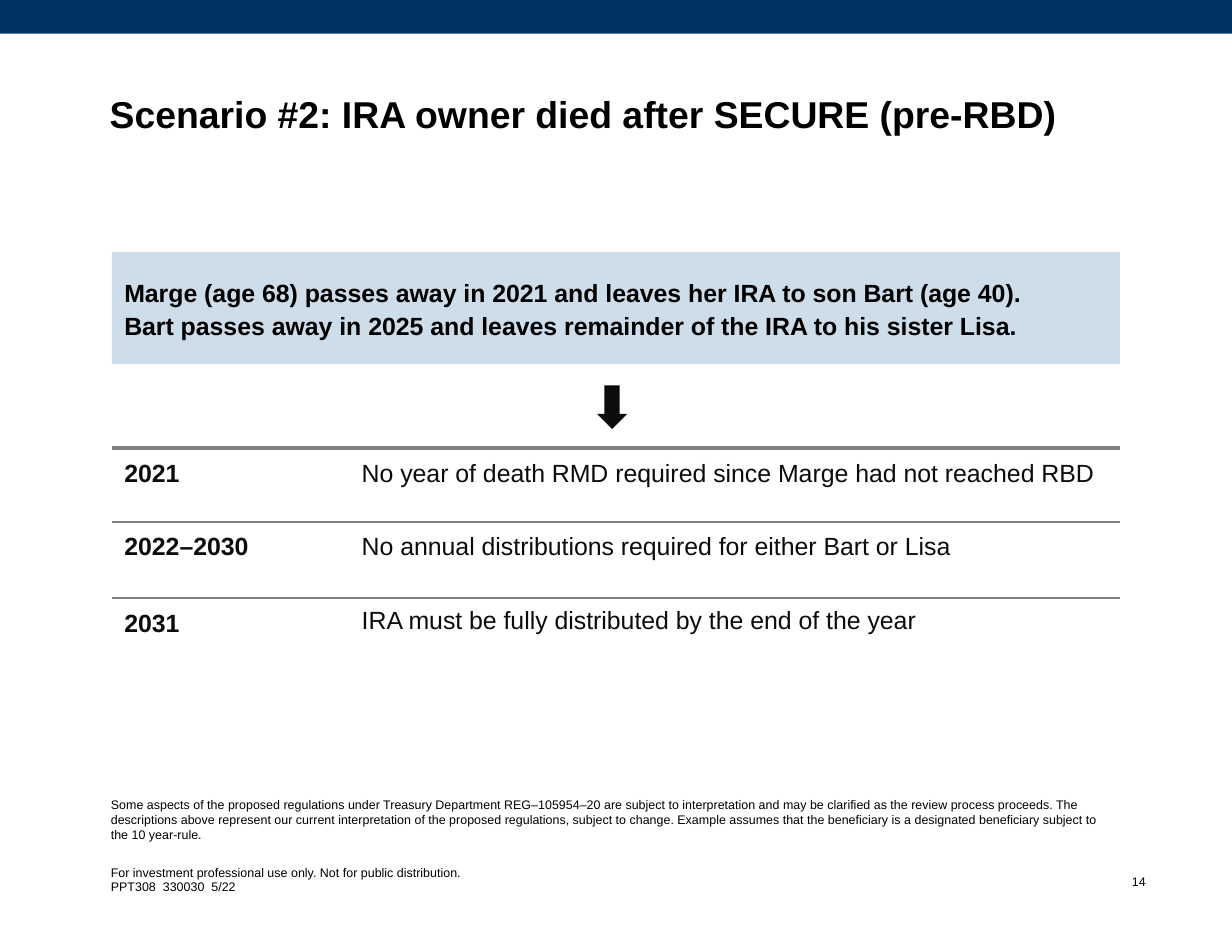
"""Build the inherited IRA scenario slide with its yearly distribution table."""
import lxml.etree
import pptx
import pptx.dml.color
import pptx.enum.shapes
import pptx.enum.text
import pptx.oxml
import pptx.oxml.ns
import pptx.util

Inches = pptx.util.Inches
Pt = pptx.util.Pt
SHAPES = pptx.enum.shapes.MSO_SHAPE
ANCHOR = pptx.enum.text.MSO_ANCHOR
ALIGN = pptx.enum.text.PP_ALIGN
COLORS = {
    "navy": "003365",
    "pale": "CDDDE9",
    "black": "000000",
    "ink": "0C0C0C",
    "rule": "808080",
}


def write(frame, lines, size, color="black", bold=False, paragraph_format=None, frame_format=None):
    """Fill a text frame with one paragraph per line."""
    settings = {"word_wrap": True, "margin_left": Inches(0.11), "margin_right": Inches(0.11),
                "margin_top": Inches(0.06), "margin_bottom": Inches(0.06)}
    settings.update(frame_format or {})
    for name, value in settings.items():
        setattr(frame, name, value)
    frame.text = "\n".join(lines)
    for para in frame.paragraphs:
        for name, value in (paragraph_format or {}).items():
            setattr(para, name, value)
        for span in para.runs:
            for name, value in {"name": "Arial", "size": Pt(size), "bold": bold}.items():
                setattr(span.font, name, value)
            span.font.color.rgb = pptx.dml.color.RGBColor.from_string(COLORS[color])


def set_border(cell, side, width):
    """Draw one cell border, or clear it when the width is zero."""
    line = lxml.etree.SubElement(cell._tc.get_or_add_tcPr(), pptx.oxml.ns.qn(f"a:ln{side}"))
    line.set("w", str(Pt(width)))
    if width:
        fill = lxml.etree.SubElement(line, pptx.oxml.ns.qn("a:solidFill"))
        lxml.etree.SubElement(fill, pptx.oxml.ns.qn("a:srgbClr")).set("val", COLORS["rule"])
    else:
        lxml.etree.SubElement(line, pptx.oxml.ns.qn("a:noFill"))


deck = pptx.Presentation()
deck.slide_width = Inches(11)
deck.slide_height = Inches(8.5)
slide = deck.slides.add_slide(deck.slide_layouts[6])

blocks = {}
for name, kind, color, area in [
    ("banner", SHAPES.RECTANGLE, "navy", (0, 0, 11, 0.3)),
    ("statement", SHAPES.RECTANGLE, "pale", (1, 2.25, 9, 1)),
    ("arrow", SHAPES.DOWN_ARROW, "ink", (5.33, 3.44, 0.27, 0.39)),
]:
    block = slide.shapes.add_shape(kind, *map(Inches, area))
    block.shadow.inherit = False
    block.fill.solid()
    block.fill.fore_color.rgb = pptx.dml.color.RGBColor.from_string(COLORS[color])
    block.line.fill.background()
    blocks[name] = block

write(
    blocks["statement"].text_frame,
    ["Marge (age 68) passes away in 2021 and leaves her IRA to son Bart (age 40). \v"
     "Bart passes away in 2025 and leaves remainder of the IRA to his sister Lisa."],
    16, bold=True,
    paragraph_format={"line_spacing": 1.1, "alignment": ALIGN.LEFT},
    frame_format={"vertical_anchor": ANCHOR.MIDDLE},
)

for area, lines, size, bold, paragraph_format, frame_format in [
    ((0.87, 0.8, 9.14, 0.35), ["Scenario #2: IRA owner died after SECURE (pre-RBD)"],
     24, True, {"line_spacing": 0.9}, {}),
    ((0.88, 7.33, 9.15, 0.25),
     ["Some aspects of the proposed regulations under Treasury Department REG–105954–20 are "
      "subject to interpretation and may be clarified as the review process proceeds. The "
      "descriptions above represent our current interpretation of the proposed regulations, "
      "subject to change. Example assumes that the beneficiary is a designated beneficiary "
      "subject to the 10 year-rule."],
     8, False, {}, {"vertical_anchor": ANCHOR.BOTTOM}),
    ((0.88, 7.66, 3.4, 0.38),
     ["For investment professional use only. Not for public distribution.",
      "PPT308  330030  5/22"],
     8, False, {}, {"word_wrap": False}),
    ((10.05, 7.76, 0.23, 0.23), ["14"], 8, False,
     {"alignment": ALIGN.RIGHT, "line_spacing": 0.9},
     {"margin_left": 0, "margin_right": Inches(0.05)}),
]:
    box = slide.shapes.add_textbox(*map(Inches, area))
    write(box.text_frame, lines, size, bold=bold,
          paragraph_format=paragraph_format, frame_format=frame_format)

timeline = [
    ("2021", "No year of death RMD required since Marge had not reached RBD"),
    ("2022–2030", "No annual distributions required for either Bart or Lisa"),
    ("2031", "IRA must be fully distributed by the end of the year"),
]
row_heights = [0.66, 0.68, 0.68]
top_rules = [2.25, 1, 1]
bottom_rules = [1, 1, 0]
table = slide.shapes.add_table(
    len(timeline), 2, Inches(1), Inches(4), Inches(9), Inches(sum(row_heights))).table
table.first_row = False
table.horz_banding = False
for column, width in zip(table.columns, [2.12, 6.88]):
    column.width = Inches(width)
for row_index, texts in enumerate(timeline):
    table.rows[row_index].height = Inches(row_heights[row_index])
    for column_index, text in enumerate(texts):
        cell = table.cell(row_index, column_index)
        for name, value in {"margin_left": 0.11, "margin_right": 0.11,
                            "margin_top": 0.08, "margin_bottom": 0.08}.items():
            setattr(cell, name, Inches(value))
        for side, width in [("L", 0), ("R", 0), ("T", top_rules[row_index]),
                            ("B", bottom_rules[row_index])]:
            set_border(cell, side, width)
        cell.fill.background()
        spacing = 1.0 if (row_index, column_index) == (2, 1) else 1.1
        write(cell.text_frame, [text], 16, "ink", column_index == 0,
              {"line_spacing": spacing})

deck.save("out.pptx")
